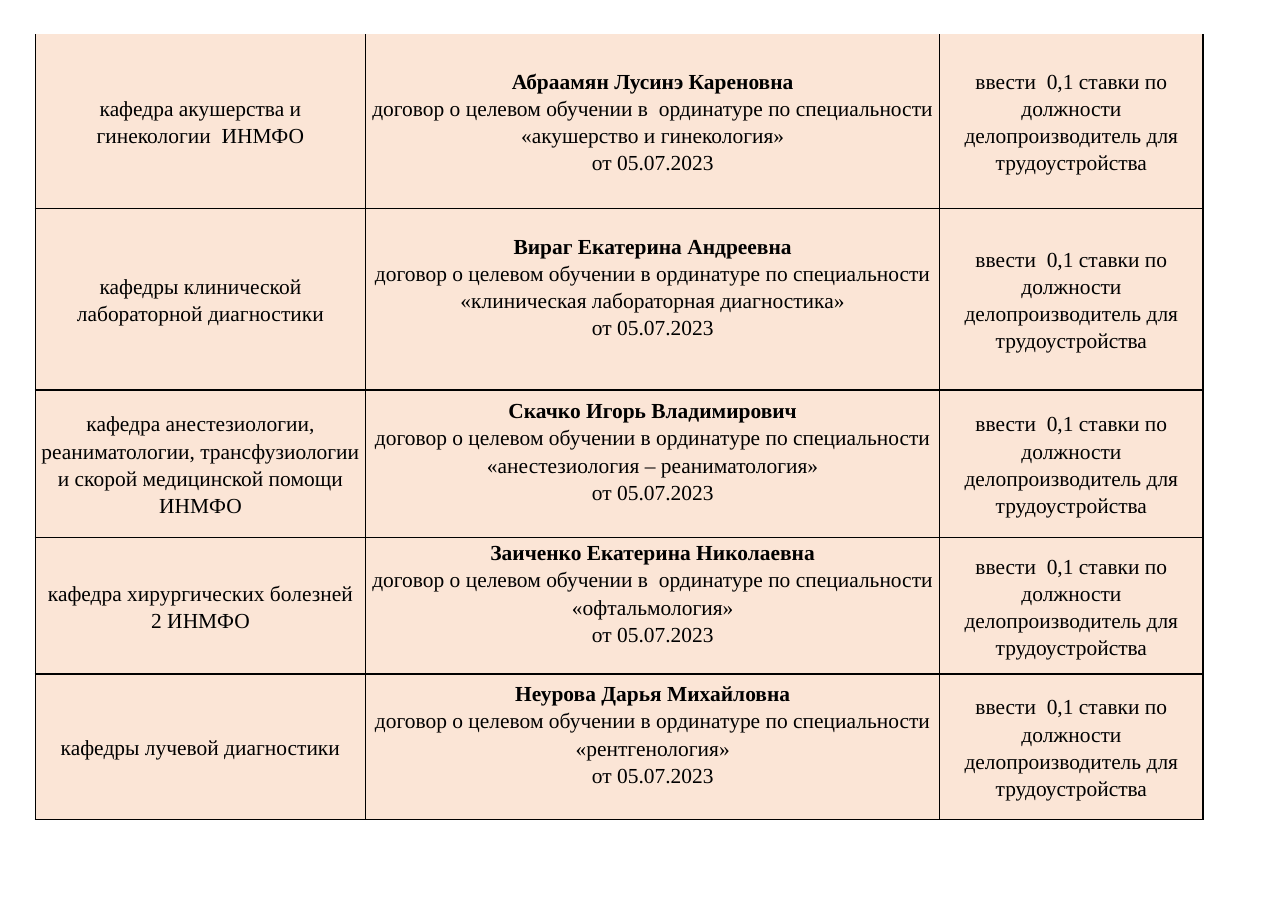
from dataclasses import dataclass

from lxml.etree import SubElement
from pptx import Presentation
from pptx.dml.color import RGBColor
from pptx.enum.text import MSO_ANCHOR as Anchor, PP_ALIGN as Align
from pptx.oxml.ns import qn
from pptx.util import Inches, Pt


@dataclass(frozen=True)
class Theme:
    font: str = "Times New Roman"
    size: int = 14
    spacing: float = 1.15
    text: str = "000000"
    fill: str = "FBE5D6"
    border: str = "000000"
    border_width: float = 1


THEME = Theme()
COLUMN_WIDTHS = (3, 5.21, 2.39)
ROW_HEIGHTS = (1.58, 1.65, 1.34, 1.24, 1.32)
LINE_HEIGHT = 0.24
DATE = "от 05.07.2023"
DECISION = "ввести  0,1 ставки по должности делопроизводитель для трудоустройства"
RESIDENTS = (
    ("кафедра акушерства и гинекологии  ИНМФО",
     "Абраамян Лусинэ Кареновна",
     "договор о целевом обучении в  ординатуре по специальности «акушерство и гинекология»"),
    ("кафедры клинической лабораторной диагностики",
     "Вираг Екатерина Андреевна",
     "договор о целевом обучении в ординатуре по специальности «клиническая лабораторная диагностика»"),
    ("кафедра анестезиологии, реаниматологии, трансфузиологии и скорой медицинской помощи ИНМФО",
     "Скачко Игорь Владимирович",
     "договор о целевом обучении в ординатуре по специальности «анестезиология – реаниматология»"),
    ("кафедра хирургических болезней 2 ИНМФО",
     "Заиченко Екатерина Николаевна",
     "договор о целевом обучении в  ординатуре по специальности «офтальмология»"),
    ("кафедры лучевой диагностики",
     "Неурова Дарья Михайловна",
     "договор о целевом обучении в ординатуре по специальности «рентгенология»"),
)


def set_borders(cell, has_top):
    tc_pr = cell._tc.get_or_add_tcPr()
    for side in "LRTB":
        line = SubElement(tc_pr, qn(f"a:ln{side}"), w=str(Pt(THEME.border_width)))
        if side == "T" and not has_top:
            SubElement(line, qn("a:noFill"))
        else:
            fill = SubElement(line, qn("a:solidFill"))
            SubElement(fill, qn("a:srgbClr"), val=THEME.border)


def write_paragraph(p, text, bold):
    p.text = text
    p.alignment = Align.CENTER
    p.line_spacing = THEME.spacing
    p.font.name = THEME.font
    p.font.size = Pt(THEME.size)
    p.font.bold = bold
    p.font.color.rgb = RGBColor.from_string(THEME.text)


def fill_cell(cell, lines, has_top, bottom=0):
    set_borders(cell, has_top)
    cell.fill.solid()
    cell.fill.fore_color.rgb = RGBColor.from_string(THEME.fill)
    cell.vertical_anchor = Anchor.MIDDLE
    cell.margin_left = cell.margin_right = Inches(0.05)
    cell.margin_top = 0
    cell.margin_bottom = Inches(bottom)
    tf = cell.text_frame
    for i, text in enumerate(lines):
        p = tf.add_paragraph() if i else tf.paragraphs[0]
        write_paragraph(p, text, bold=len(lines) > 1 and i == 0)


def add_residents_table(s):
    """Add the table of departments, residents and staffing decisions."""
    table = s.shapes.add_table(
        len(ROW_HEIGHTS), len(COLUMN_WIDTHS), Inches(0.32), Inches(0.31),
        Inches(sum(COLUMN_WIDTHS)), Inches(sum(ROW_HEIGHTS))).table
    table.first_row = table.horz_banding = False
    for column, width in zip(table.columns, COLUMN_WIDTHS):
        column.width = Inches(width)
    for i, (row, height, resident) in enumerate(zip(table.rows, ROW_HEIGHTS, RESIDENTS)):
        row.height = Inches(height)
        department, name, contract = resident
        has_top = i > 0
        left, middle, right = row.cells
        fill_cell(left, [department], has_top)
        fill_cell(middle, [name, contract, DATE], has_top, LINE_HEIGHT if has_top else 0)
        fill_cell(right, [DECISION], has_top)


def main():
    prs = Presentation()
    prs.slide_width, prs.slide_height = Inches(11.69), Inches(8.27)
    s = prs.slides.add_slide(prs.slide_layouts[6])
    add_residents_table(s)
    prs.save("out.pptx")


if __name__ == "__main__":
    main()
